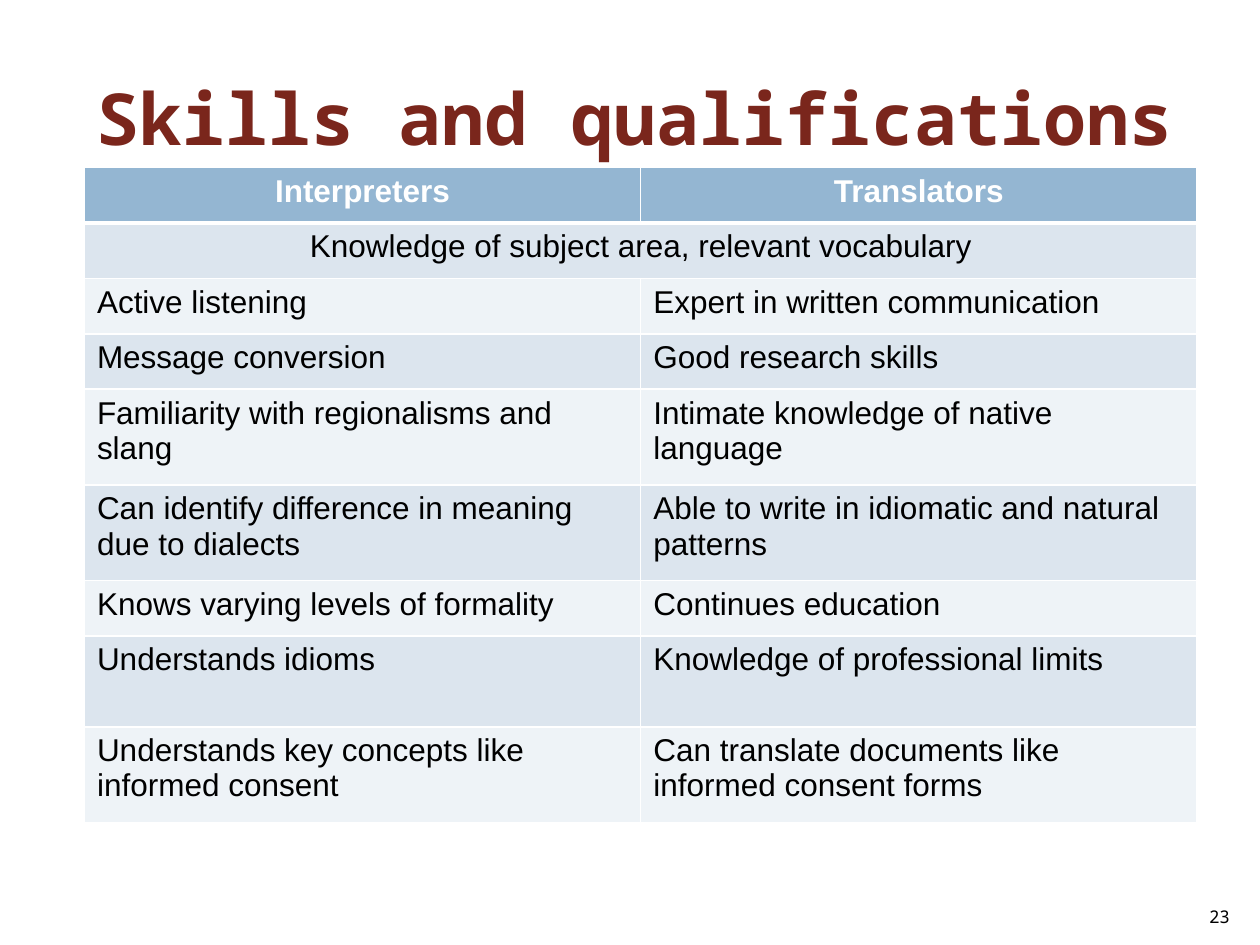
from dataclasses import dataclass

from lxml import etree
from pptx import Presentation, util as u
from pptx.dml.color import RGBColor
from pptx.enum import text
from pptx.oxml import ns

COLOURS = {
    "title": "7A261C",
    "head": "94B6D2",
    "dark band": "DCE5EE",
    "light band": "EEF3F7",
    "white": "FFFFFF",
    "black": "000000",
}
ALIGN = text.PP_ALIGN
ANCHOR = text.MSO_ANCHOR


@dataclass
class Style:
    size: float
    font: str
    colour: str
    bold: bool = False
    align: ALIGN = ALIGN.LEFT


@dataclass
class Label:
    words: str
    left: float
    top: float
    width: float
    height: float
    anchor: ANCHOR
    style: Style


@dataclass
class Row:
    cells: tuple[str, ...]
    height: float = 0.44


HEAD = Style(18, "Arial", "white", True, ALIGN.CENTER)
SHARED = Style(18, "Arial", "black", align=ALIGN.CENTER)
BODY = Style(18, "Arial", "black")

LABELS = [
    Label("Skills and qualifications", 0.67, 0.3, 8.83, 1.25, ANCHOR.MIDDLE,
          Style(41, "Noto Sans Mono", "title", True)),
    Label("23", 9.46, 7.01, 0.4, 0.4, ANCHOR.BOTTOM,
          Style(10, "Noto Sans Mono", "black", align=ALIGN.RIGHT)),
]
ROWS = [
    Row(("Interpreters", "Translators")),
    Row(("Knowledge of subject area, relevant vocabulary",)),
    Row(("Active listening", "Expert in written communication")),
    Row(("Message conversion", "Good research skills")),
    Row(("Familiarity with regionalisms and slang",
         "Intimate knowledge of native language"), 0.76),
    Row(("Can identify difference in meaning due to dialects",
         "Able to write in idiomatic and natural patterns"), 0.76),
    Row(("Knows varying levels of formality", "Continues education")),
    Row(("Understands idioms", "Knowledge of professional limits"), 0.72),
    Row(("Understands key concepts like informed consent",
         "Can translate documents like informed consent forms"), 0.76),
]


def rgb(name: str) -> RGBColor:
    return RGBColor.from_string(COLOURS[name])


def write(frame, words: str, style: Style) -> None:
    para = frame.paragraphs[0]
    para.alignment = style.align
    span = para.add_run()
    span.text = words
    formats = {"size": u.Pt(style.size), "name": style.font, "bold": style.bold}
    for key, value in formats.items():
        setattr(span.font, key, value)
    span.font.color.rgb = rgb(style.colour)


def add_label(page, label: Label) -> None:
    box = page.shapes.add_textbox(*map(
        u.Inches, (label.left, label.top, label.width, label.height)))
    formats = {"word_wrap": True, "vertical_anchor": label.anchor}
    for key, value in formats.items():
        setattr(box.text_frame, key, value)
    write(box.text_frame, label.words, label.style)


def add_borders(cell, widths: dict[str, float]) -> None:
    """Put white lines on the sides, ahead of the fill as the schema asks."""
    props = cell._tc.get_or_add_tcPr()
    for place, (side, width) in enumerate(widths.items()):
        line = etree.Element(ns.qn(f"a:ln{side}"), w=str(u.Pt(width)))
        fill = etree.SubElement(line, ns.qn("a:solidFill"))
        etree.SubElement(fill, ns.qn("a:srgbClr"), val=COLOURS["white"])
        props.insert(place, line)


def add_skills_table(page) -> None:
    columns = 2
    total = sum(row.height for row in ROWS)
    table = page.shapes.add_table(
        len(ROWS), columns, u.Inches(0.67), u.Inches(1.33),
        u.Inches(8.83), u.Inches(total)).table
    for index, row in enumerate(ROWS):
        table.rows[index].height = u.Inches(row.height)
        shared = len(row.cells) < columns
        style = HEAD if index == 0 else SHARED if shared else BODY
        band = ("head" if index == 0
                else "dark band" if index % 2 else "light band")
        widths = {"L": 1, "R": 1, "T": 3 if index == 1 else 1,
                  "B": 3 if index == 0 else 1}
        for column in range(columns):
            cell = table.cell(index, column)
            cell.fill.solid()
            cell.fill.fore_color.rgb = rgb(band)
            add_borders(cell, widths)
        if shared:
            table.cell(index, 0).merge(table.cell(index, columns - 1))
        for column, words in enumerate(row.cells):
            write(table.cell(index, column).text_frame, words, style)


def main() -> None:
    deck = Presentation()
    deck.slide_width, deck.slide_height = u.Inches(10), u.Inches(7.5)
    page = deck.slides.add_slide(deck.slide_layouts[6])
    add_skills_table(page)
    for label in LABELS:
        add_label(page, label)
    deck.save("out.pptx")


if __name__ == "__main__":
    main()
